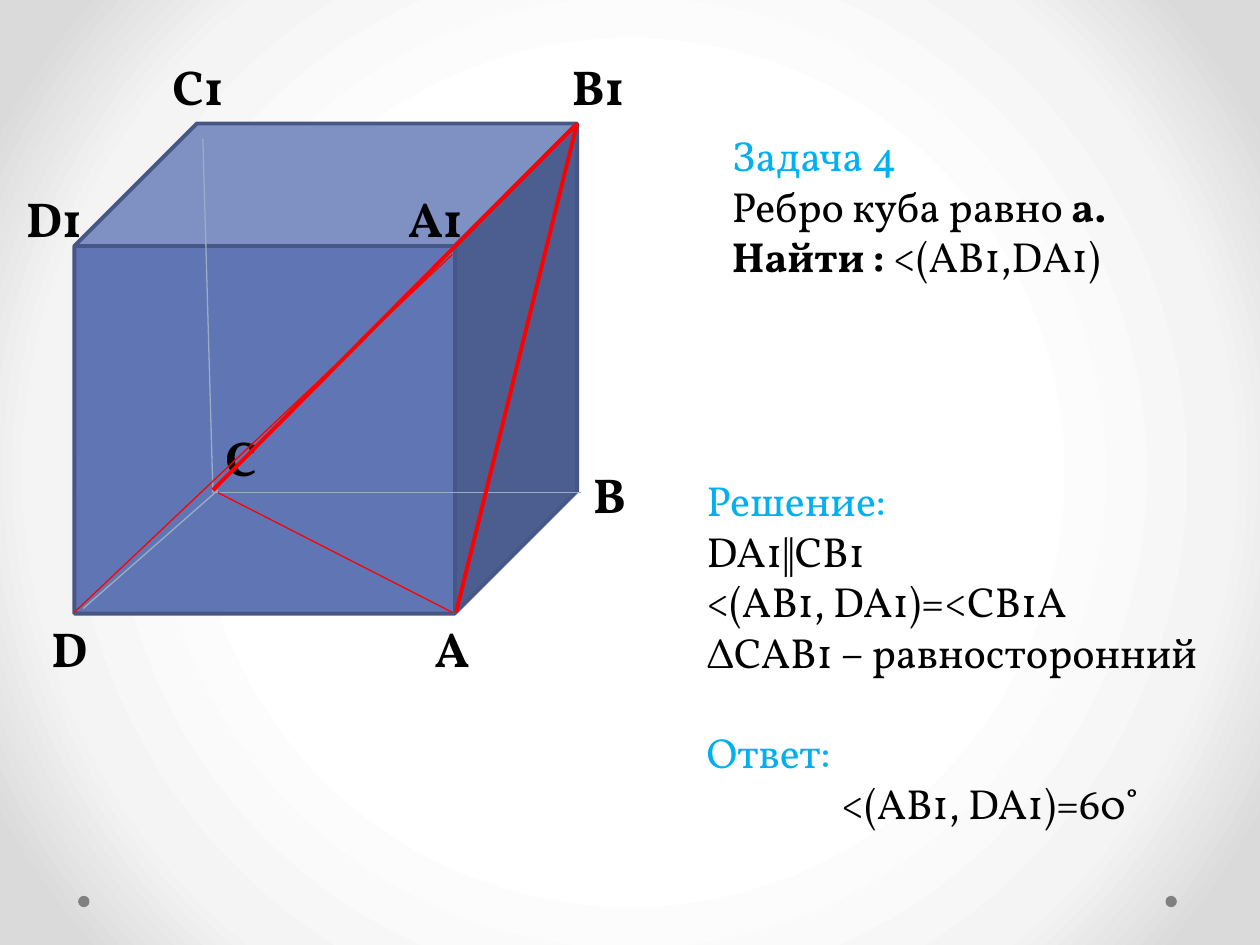
from dataclasses import dataclass
from typing import NamedTuple

from pptx import Presentation
from pptx.dml.color import RGBColor
from pptx.enum.shapes import MSO_CONNECTOR, MSO_SHAPE
from pptx.enum.text import MSO_AUTO_SIZE
from pptx.oxml import parse_xml
from pptx.oxml.ns import nsdecls, qn
from pptx.util import Inches, Pt

COLORS = {
    "text": "000000",
    "heading": "00B0F0",
    "cube": "6076B4",
    "cube_edge": "475785",
    "hidden_edge": "9BADC4",
    "diagonal": "FF0000",
    "dot": "808080",
}
BACKGROUND_STOPS = {50: "FFFFFF", 76: "F4F4F4", 92: "DADADA"}
FONT_NAME = "Vollkorn"
LINE_HEIGHT = 28.8


class Run(NamedTuple):
    text: str
    color: str = "text"
    bold: bool = False


@dataclass
class Line:
    runs: list[Run]
    space_before: float = 0
    indent: float = 0


class Segment(NamedTuple):
    start: tuple[float, float]
    end: tuple[float, float]
    color: str
    width: float


class Label(NamedTuple):
    text: str
    left: float
    top: float
    width: float


HIDDEN_EDGES = [
    Segment((1.61, 1.1), (1.69, 3.91), "hidden_edge", 0.75),
    Segment((4.61, 3.91), (1.69, 3.91), "hidden_edge", 0.75),
    Segment((1.73, 3.89), (0.66, 4.83), "hidden_edge", 0.75),
]
DIAGONALS = [
    Segment((3.62, 4.86), (4.58, 0.98), "diagonal", 2.25),
    Segment((0.59, 4.86), (3.59, 2.02), "diagonal", 0.75),
    Segment((1.69, 3.89), (4.58, 0.98), "diagonal", 2.25),
    Segment((1.73, 3.91), (3.59, 4.86), "diagonal", 0.75),
]
VERTICES = [
    Label("A", 3.35, 4.86, 0.55),
    Label("A1", 3.14, 1.45, 0.9),
    Label("B", 4.61, 3.64, 0.47),
    Label("B1", 4.44, 0.4, 0.81),
    Label("C", 1.69, 3.34, 0.55),
    Label("C1", 1.27, 0.4, 0.68),
    Label("D", 0.31, 4.86, 0.55),
    Label("D1", 0.11, 1.45, 0.75),
]
PROBLEM = [
    Line([Run("Задача 4", "heading")]),
    Line([Run("Ребро куба равно "), Run("а.", bold=True)]),
    Line([Run("Найти :", bold=True), Run(" <(АВ1,DА1)")]),
]
SOLUTION = [
    Line([Run("Решение:", "heading")]),
    Line([Run("DA1‖CB1")]),
    Line([Run("<(AB1, DA1)=<CB1A")]),
    Line([Run("ΔCAB1 – равносторонний")]),
    Line([Run("Ответ:", "heading")], space_before=LINE_HEIGHT),
    Line([Run("<(AB1, DA1)=60˚")], indent=1.07),
]


def color_of(name: str) -> RGBColor:
    return RGBColor.from_string(COLORS[name])


def set_background(slide) -> None:
    """Fill the background with a circular gradient around the slide centre."""
    slide.background.fill.gradient()
    stops = "".join(
        f'<a:gs pos="{position * 1000}"><a:srgbClr val="{color}"/></a:gs>'
        for position, color in BACKGROUND_STOPS.items()
    )
    gradient = parse_xml(
        f'<a:gradFill {nsdecls("a")} rotWithShape="1"><a:gsLst>{stops}</a:gsLst>'
        '<a:path path="circle"><a:fillToRect l="50000" t="50000" r="50000" b="50000"/>'
        "</a:path></a:gradFill>"
    )
    default_gradient = slide.element.find(".//" + qn("a:gradFill"))
    default_gradient.getparent().replace(default_gradient, gradient)


def add_solid(slide, preset, left: float, top: float, width: float, height: float, fill: str):
    shape = slide.shapes.add_shape(
        preset, Inches(left), Inches(top), Inches(width), Inches(height)
    )
    shape.shadow.inherit = False
    shape.fill.solid()
    shape.fill.fore_color.rgb = color_of(fill)
    shape.line.fill.background()
    return shape


def add_cube(slide) -> None:
    cube = add_solid(slide, MSO_SHAPE.CUBE, 0.59, 0.98, 3.99, 3.89, "cube")
    cube.line.color.rgb = color_of("cube_edge")
    cube.line.width = Pt(2.25)


def add_segment(slide, segment: Segment) -> None:
    points = [Inches(value) for value in (*segment.start, *segment.end)]
    connector = slide.shapes.add_connector(MSO_CONNECTOR.STRAIGHT, *points)
    connector.line.color.rgb = color_of(segment.color)
    connector.line.width = Pt(segment.width)
    connector.element.spPr.append(parse_xml(f'<a:effectLst {nsdecls("a")}/>'))


def add_text(
    slide, left: float, top: float, width: float, height: float, lines: list[Line], size: float
) -> None:
    text_box = slide.shapes.add_textbox(
        Inches(left), Inches(top), Inches(width), Inches(height)
    )
    frame = text_box.text_frame
    frame.word_wrap = True
    frame.auto_size = MSO_AUTO_SIZE.SHAPE_TO_FIT_TEXT
    for index, line in enumerate(lines):
        paragraph = frame.add_paragraph() if index else frame.paragraphs[0]
        paragraph.space_before = Pt(line.space_before)
        if line.indent:
            properties = paragraph._p.get_or_add_pPr()
            properties.set("marL", str(Inches(line.indent)))
        for content in line.runs:
            run = paragraph.add_run()
            run.text = content.text
            run.font.color.rgb = color_of(content.color)
            font_format = {"name": FONT_NAME, "size": Pt(size), "bold": content.bold}
            for attribute, value in font_format.items():
                setattr(run.font, attribute, value)


def main() -> None:
    presentation = Presentation()
    presentation.slide_width = Inches(10)
    presentation.slide_height = Inches(7.5)
    slide = presentation.slides.add_slide(presentation.slide_layouts[6])

    set_background(slide)
    for left in (9.25, 0.62):
        add_solid(slide, MSO_SHAPE.OVAL, left, 7.11, 0.09, 0.09, "dot")
    add_cube(slide)
    for edge in HIDDEN_EDGES:
        add_segment(slide, edge)
    for vertex in VERTICES:
        name = [Line([Run(vertex.text, bold=True)])]
        add_text(slide, vertex.left, vertex.top, vertex.width, 0.57, name, 28)
    add_text(slide, 5.71, 0.98, 3.69, 1.31, PROBLEM, 24)
    add_text(slide, 5.51, 3.72, 4.48, 2.93, SOLUTION, 24)
    for diagonal in DIAGONALS:
        add_segment(slide, diagonal)

    presentation.save("out.pptx")


if __name__ == "__main__":
    main()
